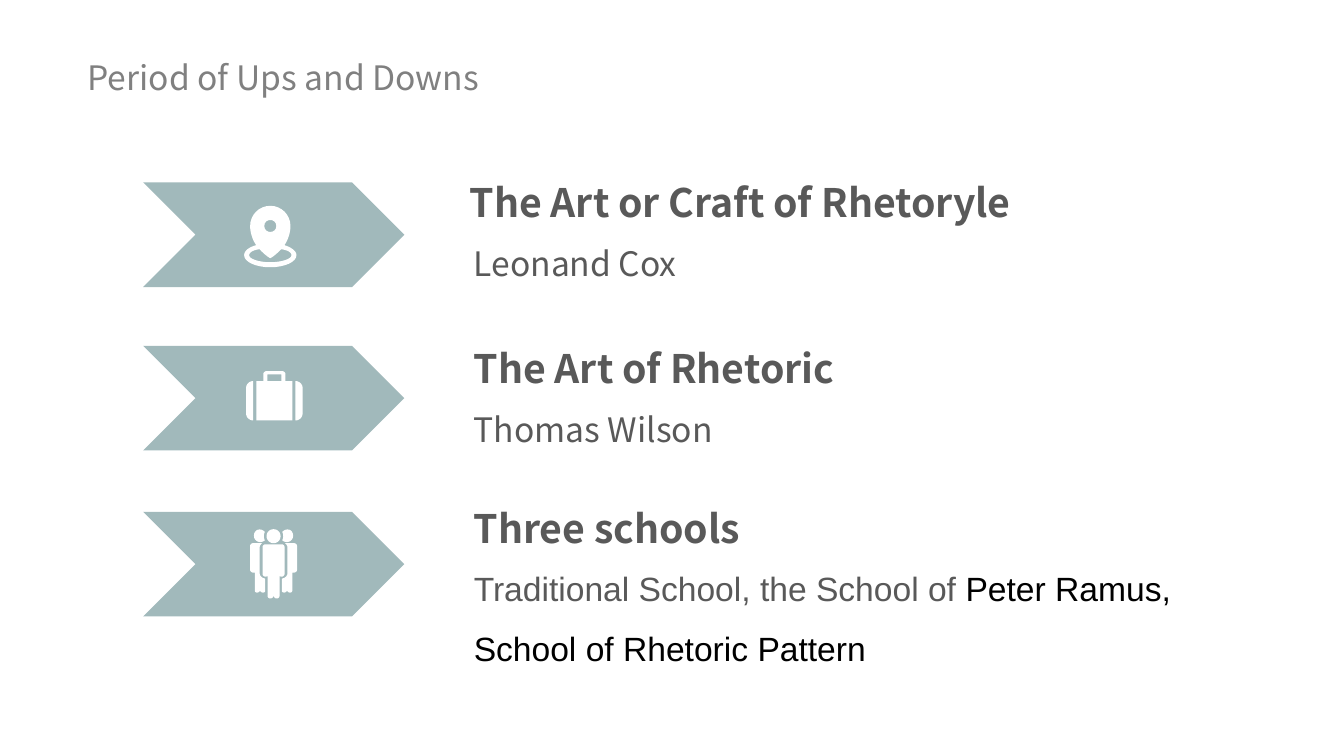
"""Build the slide on the rhetoric period of ups and downs."""
from dataclasses import dataclass

from pptx import Presentation, util as u
from pptx.dml.color import RGBColor
from pptx.enum import shapes, text

SAGE = RGBColor(0xA1, 0xB9, 0xBB)
WHITE = RGBColor(0xFF, 0xFF, 0xFF)
DARK = RGBColor(0x59, 0x59, 0x59)
GRAY = RGBColor(0x80, 0x80, 0x80)
BLACK = RGBColor(0, 0, 0)
SANS = "Noto Sans CJK SC"
ARIAL = "Arial"
CURVE_STEPS = 8

Contour = list[tuple[float, ...]]


@dataclass
class Run:
    """A piece of text in one colour."""
    words: str
    color: RGBColor = DARK


@dataclass
class Label:
    """A text box with its type settings."""
    left: float
    top: float
    width: float
    height: float
    runs: list[Run]
    size: float = 24
    font: str = SANS
    bold: bool = False
    spacing: float = 1.0


@dataclass
class Icon:
    """Outlines measured from the middle of the icon's top edge."""
    center: float
    top: float
    pieces: list[list[Contour]]


def mirror(contour: Contour) -> Contour:
    """Flip a contour left to right about the icon's axis."""
    return [tuple(-v if i % 2 == 0 else v for i, v in enumerate(step)) for step in contour]


def flatten(contour: Contour) -> list[tuple[float, float]]:
    """Turn points and cubic curves into a plain list of points."""
    points = [contour[0]]
    for step in contour[1:]:
        if len(step) == 2:
            points.append(step)
            continue
        x0, y0 = points[-1]
        x1, y1, x2, y2, x3, y3 = step
        for index in range(1, CURVE_STEPS + 1):
            t = index / CURVE_STEPS
            a, b, c, d = (1 - t) ** 3, 3 * t * (1 - t) ** 2, 3 * t * t * (1 - t), t ** 3
            points.append((a * x0 + b * x1 + c * x2 + d * x3, a * y0 + b * y1 + c * y2 + d * y3))
    return points


def paint(shape, color: RGBColor) -> None:
    """Give a shape a flat fill with no line or shadow."""
    shape.shadow.inherit = False
    shape.fill.solid()
    shape.fill.fore_color.rgb = color
    shape.line.fill.background()


def draw_icon(slide, icon: Icon) -> None:
    """Draw every piece of an icon in white."""
    for contours in icon.pieces:
        builder = None
        for contour in contours:
            start, *rest = [(u.Pt(icon.center + x), u.Pt(icon.top + y)) for x, y in flatten(contour)]
            if builder is None:
                builder = slide.shapes.build_freeform(*start)
            else:
                builder.move_to(*start)
            builder.add_line_segments(rest)
        paint(builder.convert_to_shape(), WHITE)


def draw_label(slide, label: Label) -> None:
    """Add a text box without margins."""
    box = slide.shapes.add_textbox(*map(u.Pt, (label.left, label.top, label.width, label.height)))
    frame = box.text_frame
    frame.word_wrap = True
    frame.auto_size = text.MSO_AUTO_SIZE.SHAPE_TO_FIT_TEXT
    frame.margin_left = frame.margin_top = frame.margin_right = frame.margin_bottom = u.Pt(0)
    paragraph = frame.paragraphs[0]
    paragraph.line_spacing = label.spacing
    for piece in label.runs:
        run = paragraph.add_run()
        run.text = piece.words
        run.font.name = label.font
        run.font.size = u.Pt(label.size)
        run.font.bold = label.bold
        run.font.color.rgb = piece.color


PIN = [
    [(10.1, 28.1), (14.5, 29.5, 18.7, 32, 18.7, 35.3), (18.7, 40, 10.5, 43.9, 0, 43.9),
     (-10.5, 43.9, -18.7, 40, -18.7, 35.3), (-18.7, 32, -15, 29.5, -10.1, 28.1),
     (-13, 24, -14.4, 18.7, -14.4, 14.4), (-14.4, 6.5, -8, 0, 0, 0),
     (8, 0, 14.4, 6.5, 14.4, 14.4), (14.4, 18.7, 13, 24, 10.1, 28.1)],
    [(-4.3, 14.4), (-4.3, 8.7, 4.3, 8.7, 4.3, 14.4), (4.3, 20.1, -4.3, 20.1, -4.3, 14.4)],
    [(7.7, 31), (13, 31.7, 15.1, 33.5, 15.1, 35.3), (15.1, 38, 8, 40.3, 0, 40.3),
     (-8, 40.3, -15.1, 38, -15.1, 35.3), (-15.1, 33.5, -13, 31.7, -7.7, 31),
     (-4.5, 34.5, -1, 37, -0.7, 37), (-0.3, 37.4, 0.3, 37.4, 0.7, 37), (1, 37, 4.5, 34.5, 7.7, 31)],
]
CASE_END = [(-15.1, 7.2), (-15.1, 35.3), (-18, 35.3, -20.2, 33, -20.2, 30.2), (-20.2, 12.2),
            (-20.2, 9.5, -18, 7.2, -15.1, 7.2)]
CASE_BODY = [
    [(7.9, 2.2), (7.9, 0.9, 6.6, 0, 5, 0), (-5, 0), (-6.6, 0, -7.9, 0.9, -7.9, 2.2), (-7.9, 7.2),
     (-12.8, 7.2), (-12.8, 35.3), (12.8, 35.3), (12.8, 7.2), (7.9, 7.2), (7.9, 2.2)],
    [(5, 7.2), (-5, 7.2), (-5, 2.4), (5, 2.4), (5, 7.2)],
]
FRONT_HEAD = [(-5, 5), (-5, 2.2, -2.8, 0, 0, 0), (2.8, 0, 5, 2.2, 5, 5),
              (5, 7.8, 2.8, 10, 0, 10), (-2.8, 10, -5, 7.8, -5, 5)]
FRONT_BODY = [(-5.8, 10.8), (5.8, 10.8), (7, 10.8, 7.9, 11.8, 7.9, 13), (7.9, 31.7),
              (7.9, 33.6, 6, 34.6, 4.3, 33.5), (4.3, 47.5), (4.3, 50.2, 0.4, 50.2, 0, 47.5),
              (-0.4, 50.2, -4.3, 50.2, -4.3, 47.5), (-4.3, 33.5),
              (-6, 34.6, -7.9, 33.6, -7.9, 31.7), (-7.9, 13), (-7.9, 11.8, -7, 10.8, -5.8, 10.8)]
SIDE_HEAD = [(-6.2, 2), (-7.2, 4, -7.2, 6, -6.2, 8), (-9, 10.6, -14, 9, -14, 4.7),
             (-14, 0, -9, -1.2, -6.2, 2)]
SIDE_BODY = [(-14.6, 10), (-8.2, 10), (-9.4, 11, -9.9, 12, -9.9, 13), (-9.9, 31.7),
             (-9.9, 33.5, -8, 35, -6, 35.3), (-6, 44.6), (-7, 45.8, -9, 45.4, -9.7, 43.9),
             (-10.3, 45.8, -13.4, 45.8, -13.4, 43.9), (-13.4, 31),
             (-15, 31.4, -16.8, 30.5, -16.8, 29), (-16.8, 12.2), (-16.8, 11, -15.8, 10, -14.6, 10)]

ARROW_TOPS = [130.3, 247, 365.6]
ICONS = [
    Icon(193.1, 147, [PIN]),
    Icon(196, 265, [[CASE_END], CASE_BODY, [mirror(CASE_END)]]),
    Icon(195.4, 378, [[FRONT_HEAD], [FRONT_BODY], [SIDE_HEAD], [mirror(SIDE_HEAD)],
                      [SIDE_BODY], [mirror(SIDE_BODY)]]),
]
LABELS = [
    Label(62.6, 41, 453.6, 28.8, [Run("Period of Ups and Downs", GRAY)]),
    Label(335.5, 127.4, 433.4, 33.8, [Run("The Art or Craft of Rhetoryle")], 28, bold=True),
    Label(338.4, 159.1, 531.4, 38.2, [Run("Leonand Cox")], spacing=1.5),
    Label(338.4, 246.2, 419.8, 33.8, [Run("The Art of Rhetoric")], 28, bold=True),
    Label(338.4, 277.9, 531.4, 38.2, [Run("Thomas Wilson")], spacing=1.5),
    Label(338.4, 360, 332.6, 33.8, [Run("Three schools")], 28, bold=True),
    Label(338.4, 391, 531.4, 82.1, [Run("Traditional School, the School of "),
                                    Run("Peter Ramus, School of Rhetoric Pattern", BLACK)],
          font=ARIAL, spacing=1.5),
]


def main() -> None:
    """Draw the arrows, icons and labels and save the slide."""
    presentation = Presentation()
    presentation.slide_width, presentation.slide_height = u.Pt(960), u.Pt(540)
    slide = presentation.slides.add_slide(presentation.slide_layouts[6])
    for top, icon in zip(ARROW_TOPS, ICONS):
        arrow = slide.shapes.add_shape(
            shapes.MSO_SHAPE.CHEVRON, u.Pt(102.3), u.Pt(top), u.Pt(186.5), u.Pt(74.7))
        paint(arrow, SAGE)
        draw_icon(slide, icon)
    for label in LABELS:
        draw_label(slide, label)
    presentation.save("out.pptx")


if __name__ == "__main__":
    main()
